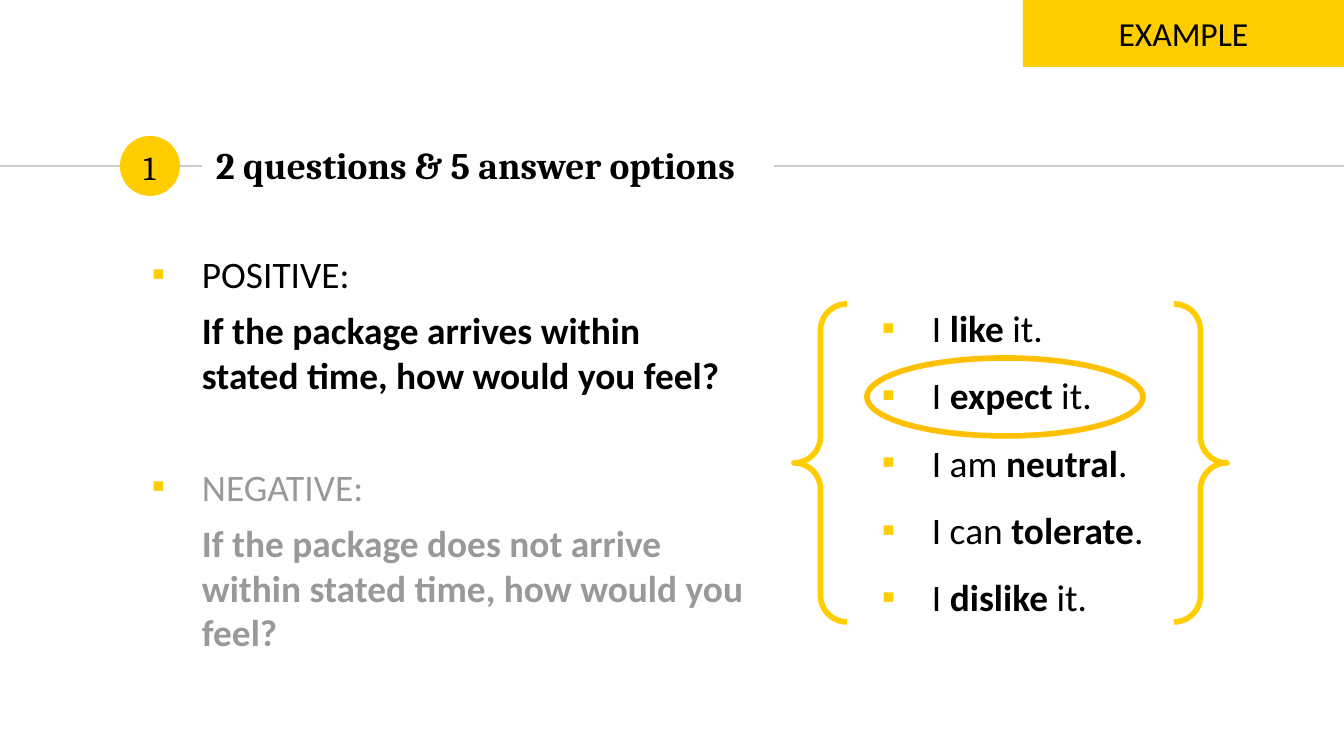
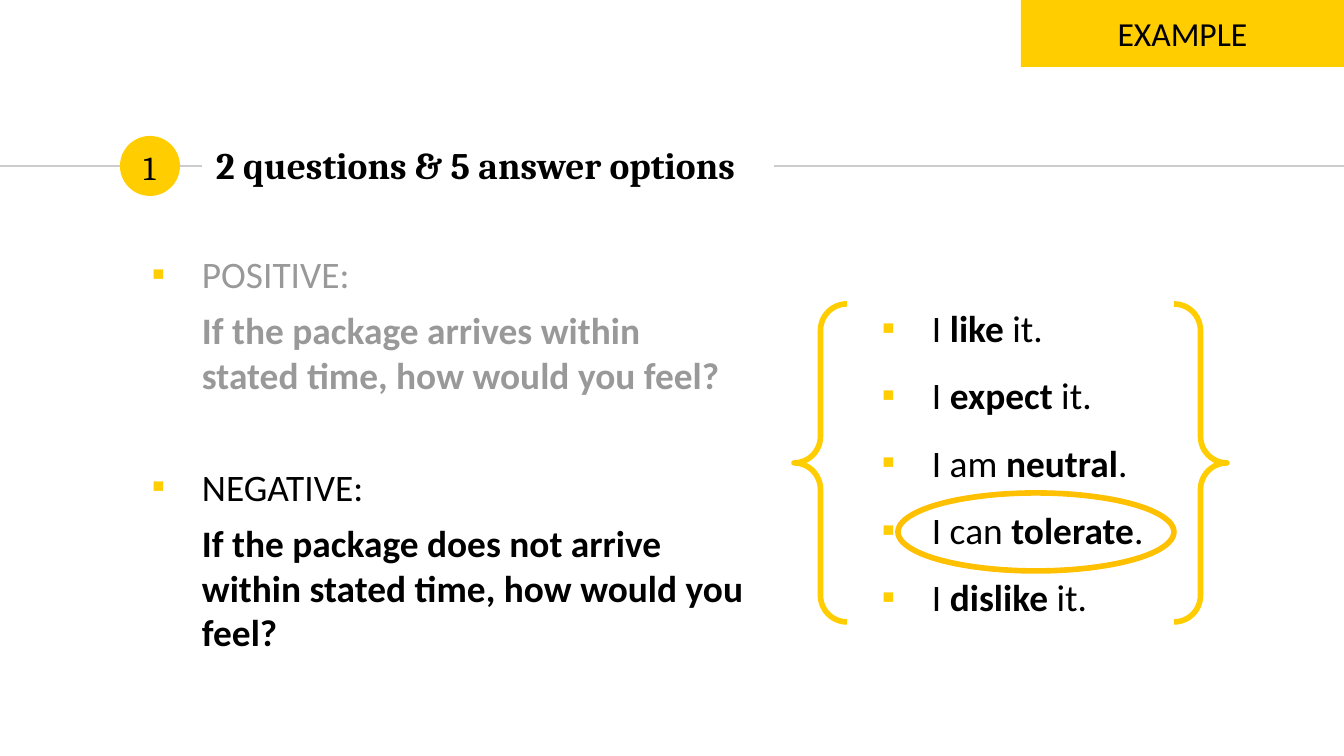
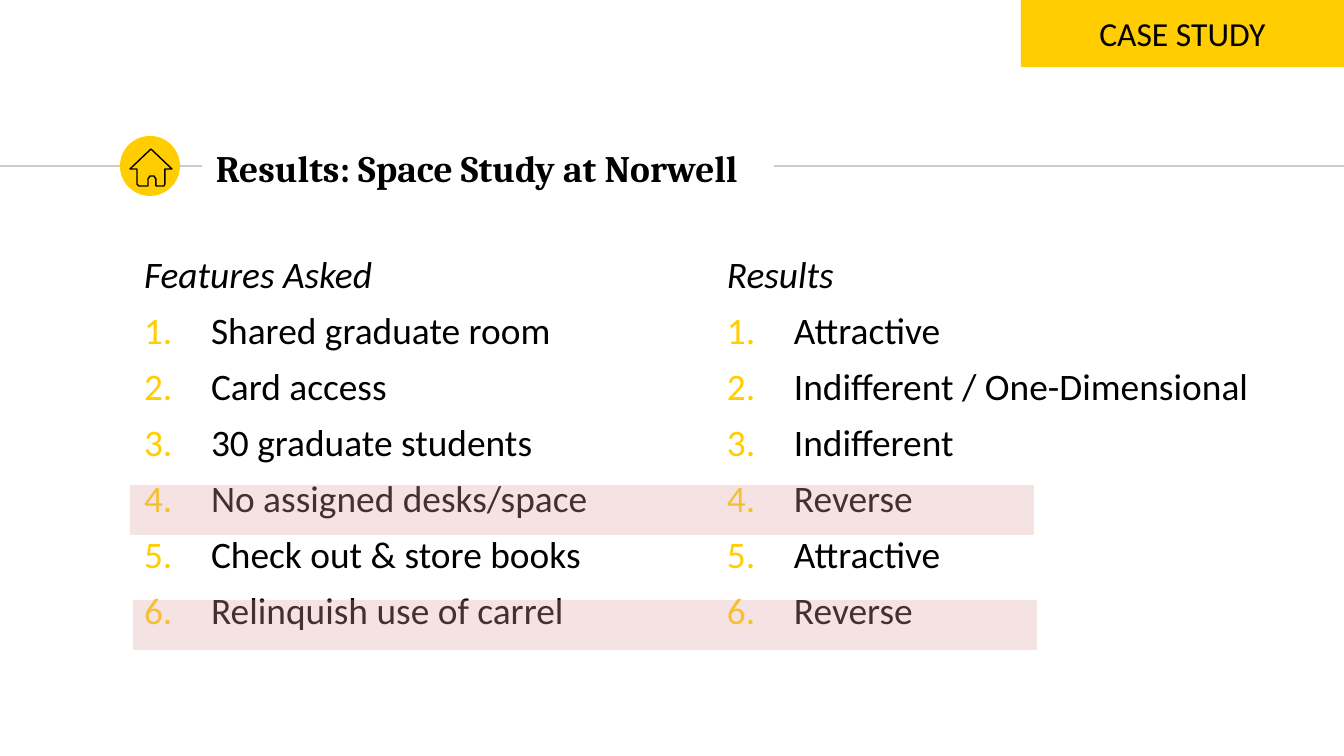
import pptx
import pptx.util
import pptx.dml.color
import pptx.enum.shapes
import pptx.enum.text
import pptx.oxml
import pptx.oxml.ns

PX = 914400 / 134.4  # EMU in one px
SLIDE_W, SLIDE_H = 1344, 756
INSET = 13
RULE_Y = 166
COLORS = {
    "yellow": "FFCD00", "amber": "FFC000", "rule": "CCCCCC",
    "ink": "000000", "muted": "999999", "rose": "E0A3A3",
}
HEAD_FONT, BODY_FONT = "Cambria", "Calibri"
SHAPE = pptx.enum.shapes.MSO_SHAPE
ALIGN = pptx.enum.text.PP_ALIGN
ANCHOR = pptx.enum.text.MSO_ANCHOR

ANSWERS = [("I ", "like", " it."), ("I ", "expect", " it."), ("I am ", "neutral", "."),
           ("I can ", "tolerate", "."), ("I ", "dislike", " it.")]
QUESTIONS = [
    ("POSITIVE:", "If the package arrives within stated time, how would you feel?"),
    ("NEGATIVE:", "If the package does not arrive within stated time, how would you feel?"),
]
FEATURES = ["Shared graduate room", "Card access", "30 graduate students",
            "No assigned desks/space", "Check out & store books", "Relinquish use of carrel"]
RESULTS = ["Attractive", "Indifferent / One-Dimensional", "Indifferent",
           "Reverse", "Attractive", "Reverse"]
HOUSE = [(151, 149), (130, 169), (137, 169), (137, 184), (139, 186), (148, 186),
         (148, 179), (150, 176), (154, 176), (156, 179), (156, 186), (164, 186),
         (165, 184), (165, 169), (172, 169)]


def px(n):
    return pptx.util.Emu(round(n * PX))


def rgb(name):
    return pptx.dml.color.RGBColor.from_string(COLORS[name])


def add_xml(parent, tag, attributes="", inner=""):
    """Append one DrawingML element to parent."""
    ns = pptx.oxml.ns.nsdecls("a")
    parent.append(pptx.oxml.parse_xml(f"<a:{tag} {ns} {attributes}>{inner}</a:{tag}>"))


def add_run(paragraph, text, size=20, font=BODY_FONT, color="ink", bold=False, italic=False):
    run = paragraph.add_run()
    run.text = text
    run.font.size = pptx.util.Pt(size)
    run.font.name = font
    run.font.bold = bold
    run.font.italic = italic
    run.font.color.rgb = rgb(color)


def set_frame(frame, anchor=ANCHOR.TOP):
    frame.word_wrap = True
    frame.auto_size = pptx.enum.text.MSO_AUTO_SIZE.NONE
    frame.vertical_anchor = anchor
    frame.margin_left = frame.margin_right = px(INSET)
    frame.margin_top = frame.margin_bottom = px(INSET)


def add_box(slide, x, y, w, h, anchor=ANCHOR.TOP):
    frame = slide.shapes.add_textbox(px(x), px(y), px(w), px(h)).text_frame
    set_frame(frame, anchor)
    return frame


def next_paragraph(frame, before=6, spacing=None):
    first = frame.paragraphs[0]
    paragraph = frame.add_paragraph() if first.runs else first
    paragraph.space_before = pptx.util.Pt(before)
    if spacing:
        paragraph.line_spacing = spacing
    return paragraph


def indent(paragraph, left, hanging=0):
    props = paragraph._p.get_or_add_pPr()
    props.set("marL", str(px(left)))
    props.set("indent", str(px(-hanging)))
    return props


def add_bullet(paragraph, left, hanging, tag, attributes):
    props = indent(paragraph, left, hanging)
    add_xml(props, "buClr", inner=f'<a:srgbClr val="{COLORS["yellow"]}"/>')
    add_xml(props, "buFont", f'typeface="{BODY_FONT}"')
    add_xml(props, tag, attributes)


def square_bullet(paragraph):
    add_bullet(paragraph, 67, 50, "buChar", 'char="▪"')


def style_figure(figure, fill, line, width):
    figure.shadow.inherit = False
    if fill:
        figure.fill.solid()
        figure.fill.fore_color.rgb = rgb(fill)
    else:
        figure.fill.background()
    if line:
        figure.line.color.rgb = rgb(line)
        figure.line.width = pptx.util.Pt(width)
    else:
        figure.line.fill.background()


def add_figure(slide, kind, x, y, w, h, fill=None, line=None, alpha=None):
    figure = slide.shapes.add_shape(kind, px(x), px(y), px(w), px(h))
    style_figure(figure, fill, line, 3)
    if alpha:
        color = figure._element.spPr.find(".//" + pptx.oxml.ns.qn("a:srgbClr"))
        add_xml(color, "alpha", f'val="{alpha * 1000}"')
    return figure


def add_rule(slide, x1, x2):
    rule = slide.shapes.add_connector(
        pptx.enum.shapes.MSO_CONNECTOR.STRAIGHT, px(x1), px(RULE_Y), px(x2), px(RULE_Y))
    rule.line.color.rgb = rgb("rule")
    rule.line.width = pptx.util.Pt(0.75)
    add_xml(rule._element.spPr, "effectLst")


def start_slide(deck, heading, title_box, tag, tag_x=1021):
    """Add a slide with the shared rules, disc, title and corner tag."""
    slide = deck.slides.add_slide(deck.slide_layouts[5])
    add_rule(slide, 0, 202)
    add_rule(slide, 774, SLIDE_W)
    add_figure(slide, SHAPE.OVAL, 120, RULE_Y - 30, 60, 60, fill="yellow")

    title = slide.shapes.title
    title.left, title.top, title.width, title.height = map(px, title_box)
    set_frame(title.text_frame, ANCHOR.MIDDLE)
    heading_line = title.text_frame.paragraphs[0]
    heading_line.alignment = ALIGN.LEFT
    add_run(heading_line, heading, font=HEAD_FONT, bold=True)

    corner = add_figure(slide, SHAPE.RECTANGLE, tag_x, 0, SLIDE_W - tag_x, 67, fill="yellow")
    set_frame(corner.text_frame, ANCHOR.MIDDLE)
    corner_line = corner.text_frame.paragraphs[0]
    corner_line.alignment = ALIGN.CENTER
    add_run(corner_line, tag, size=18)
    return slide


def add_questions(slide, active):
    frame = add_box(slide, 122, 238, 636, 474)
    for i, (label, question) in enumerate(QUESTIONS):
        color = "ink" if i == active else "muted"
        label_line = next_paragraph(frame, before=36 if i else 6)
        square_bullet(label_line)
        add_run(label_line, label, color=color)
        question_line = next_paragraph(frame)
        indent(question_line, 67)
        add_run(question_line, question, color=color, bold=True)


def add_answers(slide, height):
    add_figure(slide, SHAPE.DOUBLE_BRACE, 794, 304, 433, 318, line="yellow")
    frame = add_box(slide, 852, 270, 343, height)
    for i, (lead, key, tail) in enumerate(ANSWERS):
        answer = next_paragraph(frame, before=0 if i else 6, spacing=1.5)
        square_bullet(answer)
        add_run(answer, lead)
        add_run(answer, key, bold=True)
        add_run(answer, tail)


def question_slide(deck, title_box, tag_x, active, answers_h, choice):
    slide = start_slide(deck, "2 questions & 5 answer options", title_box, "EXAMPLE", tag_x)
    add_questions(slide, active)
    add_answers(slide, answers_h)
    step = add_box(slide, 122, 138, 55, 58, ANCHOR.MIDDLE).paragraphs[0]
    step.alignment = ALIGN.CENTER
    add_run(step, "1", size=18, font=HEAD_FONT)
    add_figure(slide, SHAPE.OVAL, *choice, 276, 78, line="amber")


def add_numbered(slide, x, w, left, heading, items):
    frame = add_box(slide, x, 238, w, 474)
    heading_line = next_paragraph(frame)
    indent(heading_line, left)
    add_run(heading_line, heading, italic=True)
    for item in items:
        item_line = next_paragraph(frame)
        add_bullet(item_line, left + 67, 67, "buAutoNum", 'type="arabicPeriod"')
        add_run(item_line, item)


def add_house(slide):
    builder = slide.shapes.build_freeform(*HOUSE[0], scale=PX)
    builder.add_line_segments(HOUSE[1:], close=True)
    style_figure(builder.convert_to_shape(), None, "ink", 0.75)


def results_slide(deck):
    slide = start_slide(deck, "Results: Space Study at Norwell", (203, 135, 650, 65), "CASE STUDY")
    add_numbered(slide, 131, 562, 0, "Features Asked", FEATURES)
    add_numbered(slide, 699, 645, 15, "Results", RESULTS)
    add_house(slide)
    # Bands over the reverse features
    for x, y in ((133, 600), (130, 485)):
        add_figure(slide, SHAPE.RECTANGLE, x, y, 904, 50, fill="rose", alpha=30)


def main():
    deck = pptx.Presentation()
    deck.slide_width, deck.slide_height = px(SLIDE_W), px(SLIDE_H)
    question_slide(deck, (203, 132, 840, 65), 1023, 0, 386, (867, 358))
    question_slide(deck, (203, 129, 751, 71), 1021, 1, 421, (898, 493))
    results_slide(deck)
    deck.save("out.pptx")


if __name__ == "__main__":
    main()
